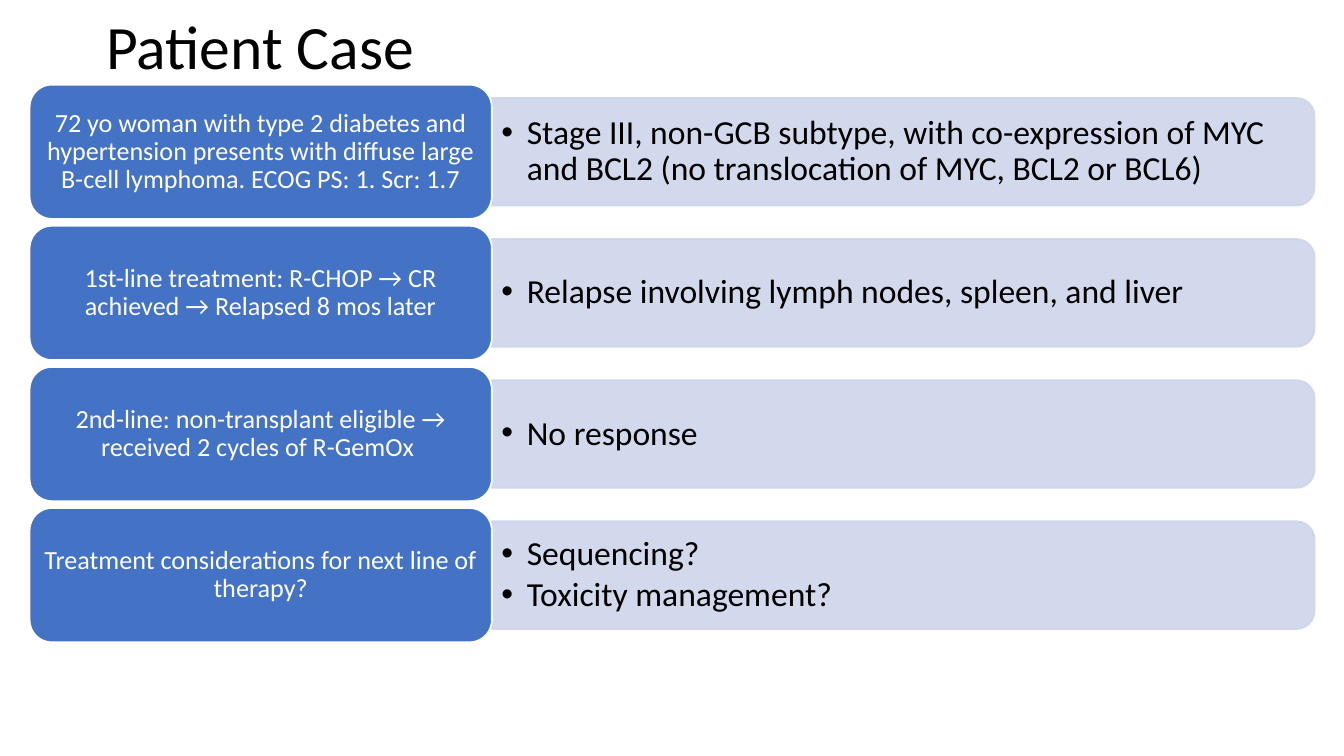
from pptx import Presentation
from pptx.dml.color import RGBColor
from pptx.enum.shapes import MSO_SHAPE
from pptx.enum.text import MSO_ANCHOR, PP_ALIGN
from pptx.oxml.ns import qn
from pptx.util import Inches, Pt
from lxml.etree import SubElement

HUES = {"blue": "4472C4", "pale": "CFD5EA", "white": "FFFFFF", "black": "000000"}
ROWS = [
    ("72 yo woman with type 2 diabetes and hypertension presents with diffuse large "
     "B-cell lymphoma. ECOG PS: 1. Scr: 1.7",
     ["Stage III, non-GCB subtype, with co-expression of MYC and BCL2 "
      "(no translocation of MYC, BCL2 or BCL6)"]),
    ("1st-line treatment: R-CHOP → CR achieved → Relapsed 8 mos later",
     ["Relapse involving lymph nodes, spleen, and liver"]),
    ("2nd-line: non-transplant eligible → received 2 cycles of R-GemOx ",
     ["No response"]),
    ("Treatment considerations for next line of therapy?",
     ["Sequencing?", "Toxicity management?"]),
]
TOP, STEP, LEFT = 0.63, 1.05, 0.22
CARD_W, CARD_H = 3.44, 1
BAR_W, BAR_H = 6.12, 0.8


def style(para, size, hue, align=PP_ALIGN.LEFT, after=0):
    para.alignment = align
    para.line_spacing = 0.9
    para.space_before = Pt(0)
    para.space_after = Pt(after)
    para.font.name = "Calibri"
    para.font.size = Pt(size)
    para.font.color.rgb = RGBColor.from_string(HUES[hue])


def paint(shape, fill, line):
    shape.shadow.inherit = False
    shape.fill.solid()
    shape.fill.fore_color.rgb = RGBColor.from_string(HUES[fill])
    shape.line.color.rgb = RGBColor.from_string(HUES[line])
    shape.line.width = Pt(1)


prs = Presentation()
prs.slide_width, prs.slide_height = Inches(10), Inches(10 * 9 / 16)
slide = prs.slides.add_slide(prs.slide_layouts[5])

title = slide.shapes.title
title.left, title.top = Inches(0.69), Inches(0.04)
title.width, title.height = Inches(8.62), Inches(0.66)
title.text_frame.text = "Patient Case"
title.text_frame.vertical_anchor = MSO_ANCHOR.MIDDLE
style(title.text_frame.paragraphs[0], 33, "black")

for row, (lead, notes) in enumerate(ROWS):
    top = TOP + row * STEP
    mid = top + CARD_H / 2
    edge = LEFT + CARD_W

    bar = slide.shapes.add_shape(
        MSO_SHAPE.ROUND_2_SAME_RECTANGLE,
        Inches(edge + (BAR_W - BAR_H) / 2), Inches(mid - BAR_W / 2),
        Inches(BAR_H), Inches(BAR_W))
    bar.rotation = 90
    paint(bar, "pale", "pale")
    for tint in bar._element.spPr.iter(qn("a:srgbClr")):
        SubElement(tint, qn("a:alpha"), val="90000")

    box = slide.shapes.add_textbox(
        Inches(edge), Inches(mid - 0.36), Inches(6.08), Inches(0.72))
    frame = box.text_frame
    frame.word_wrap = True
    frame.vertical_anchor = MSO_ANCHOR.MIDDLE
    frame.margin_left = frame.margin_right = Inches(0.07)
    frame.margin_top = frame.margin_bottom = Inches(0.04)
    frame.text = "\n".join(notes)
    for para in frame.paragraphs:
        props = para._p.get_or_add_pPr()
        props.set("marL", str(Inches(0.19)))
        props.set("indent", str(-Inches(0.19)))
        SubElement(props, qn("a:buFont"), typeface="Arial")
        SubElement(props, qn("a:buChar"), char="•")
        style(para, 18, "black", after=2.7)

    card = slide.shapes.add_shape(
        MSO_SHAPE.ROUNDED_RECTANGLE,
        Inches(LEFT), Inches(top), Inches(CARD_W), Inches(CARD_H))
    paint(card, "blue", "white")
    frame = card.text_frame
    frame.word_wrap = True
    frame.vertical_anchor = MSO_ANCHOR.MIDDLE
    frame.margin_left = frame.margin_right = Inches(0.06)
    frame.margin_top = frame.margin_bottom = Inches(0.03)
    frame.text = lead
    style(frame.paragraphs[0], 14, "white", PP_ALIGN.CENTER, 4.9)

prs.save("out.pptx")
